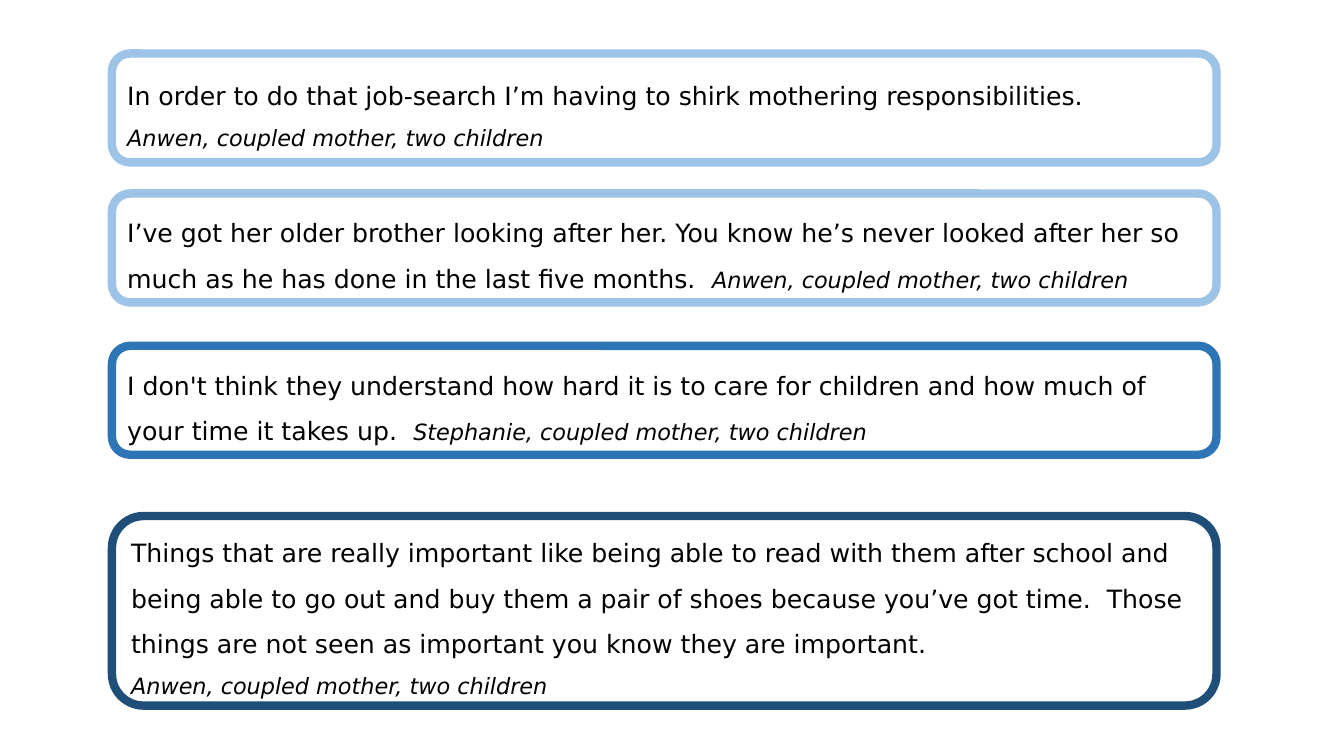
from pptx import Presentation
from pptx.dml.color import RGBColor
from pptx.enum.shapes import MSO_SHAPE
from pptx.enum.text import MSO_ANCHOR, PP_ALIGN
from pptx.util import Pt

ROUND = MSO_SHAPE.ROUNDED_RECTANGLE
MIDDLE = MSO_ANCHOR.MIDDLE
LEFT = PP_ALIGN.LEFT

COLORS = {
    "light": "9DC3E6",
    "mid": "2E75B6",
    "dark": "1F4E79",
    "text": "000000",
    "fill": "FFFFFF",
}
FONT = "DejaVu Sans"
ANWEN = ("Anwen, coupled mother, two children", True)
STEPH = ("Stephanie, coupled mother, two children", True)

QUOTES = [
    (38.2, 77.8, "light", [
        [("In order to do that job-search I’m having to shirk mothering responsibilities.", False)],
        [ANWEN],
    ]),
    (138.2, 77.8, "light", [
        [("I’ve got her older brother looking after her. You know he’s never looked after her so "
          "much as he has done in the last five months.  ", False), ANWEN],
    ]),
    (247, 77.8, "mid", [
        [("I don't think they understand how hard it is to care for children and how much of", False)],
        [("your time it takes up.  ", False), STEPH],
    ]),
    (368.6, 135.4, "dark", [
        [("Things that are really important like being able to read with them after school and "
          "being able to go out and buy them a pair of shoes because you’ve got time.  Those "
          "things are not seen as important you know they are important.", False)],
        [ANWEN],
    ]),
]


def tint(name):
    return RGBColor.from_string(COLORS[name])


deck = Presentation()
deck.slide_width = Pt(960)
deck.slide_height = Pt(540)
slide = deck.slides.add_slide(deck.slide_layouts[6])

for top, height, color, lines in QUOTES:
    box = slide.shapes.add_shape(ROUND, Pt(80), Pt(top), Pt(789), Pt(height))
    box.shadow.inherit = False
    box.fill.solid()
    box.fill.fore_color.rgb = tint("fill")
    box.line.color.rgb = tint(color)
    box.line.width = Pt(6)
    frame = box.text_frame
    frame.word_wrap = True
    frame.vertical_anchor = MIDDLE
    for i, line in enumerate(lines):
        para = frame.add_paragraph() if i else frame.paragraphs[0]
        para.alignment = LEFT
        para.line_spacing = 1.5
        for text, source in line:
            run = para.add_run()
            run.text = text
            run.font.name = FONT
            run.font.size = Pt(16 if source else 18)
            run.font.italic = source
            run.font.color.rgb = tint("text")

deck.save("out.pptx")
